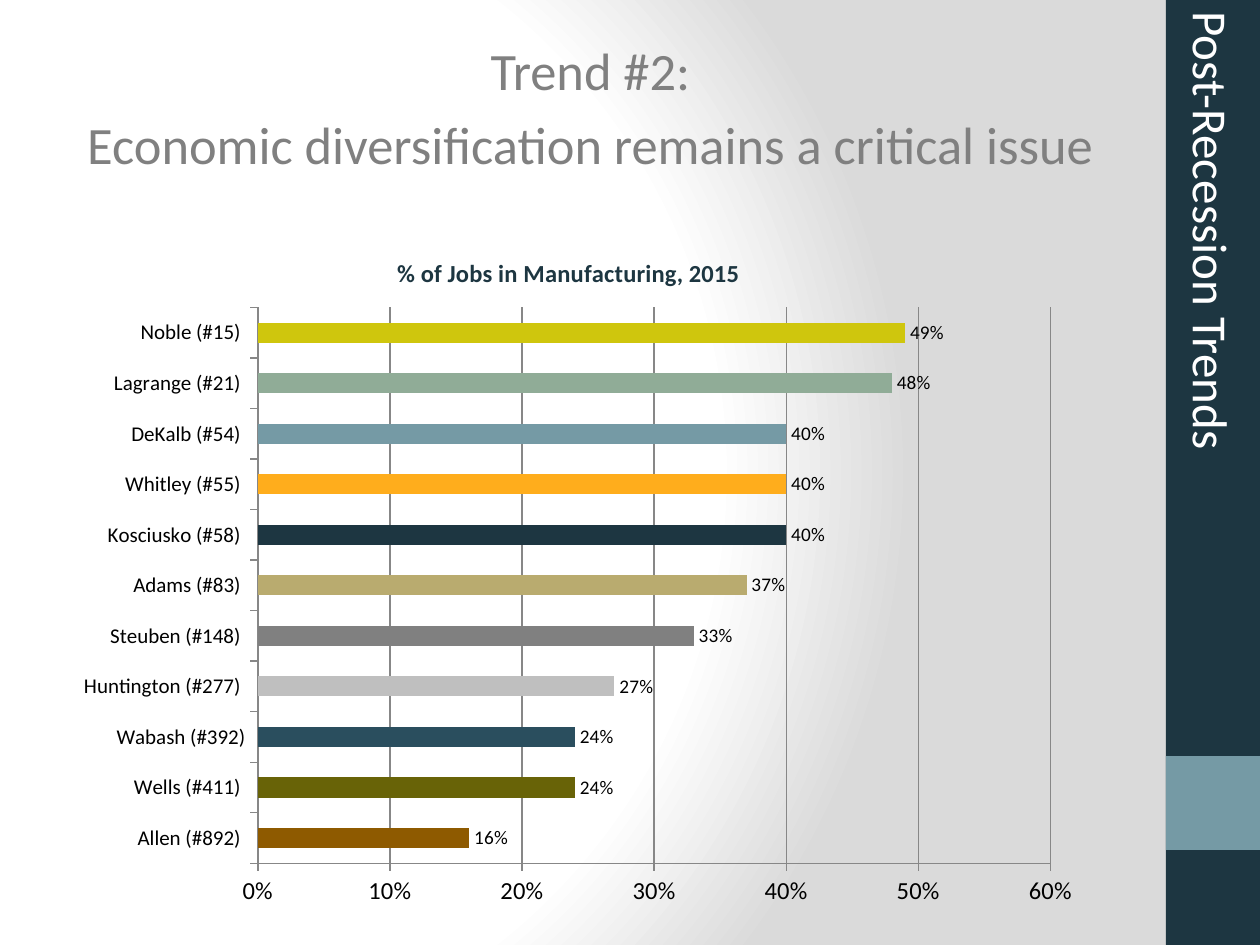
from lxml import etree
from pptx import Presentation
from pptx import util as u
from pptx.chart.data import CategoryChartData
from pptx.dml.color import RGBColor
from pptx.enum import chart as ch, shapes, text
from pptx.oxml import parse_xml
from pptx.oxml.ns import nsdecls, qn

HEX = {"navy": "1D3641", "teal": "759AA5", "gray": "808080", "white": "FFFFFF",
       "black": "000000", "line": "878787"}
JOBS = [  # county (rank), share of jobs, bar colour
    ("Allen (#892) ", 0.16, "8E5A00"),
    ("Wells (#411) ", 0.24, "686307"),
    ("Wabash (#392)", 0.24, "2A4E5E"),
    ("Huntington (#277) ", 0.27, "BFBFBF"),
    ("Steuben (#148) ", 0.33, HEX["gray"]),
    ("Adams (#83) ", 0.37, "B9AB6F"),
    ("Kosciusko (#58) ", 0.40, HEX["navy"]),
    ("Whitley (#55) ", 0.40, "FFAD1C"),
    ("DeKalb (#54) ", 0.40, HEX["teal"]),
    ("Lagrange (#21) ", 0.48, "90AC97"),
    ("Noble (#15) ", 0.49, "CFC60D"),
]


def px(*nums):
    """Turn pixels at 126 to the inch into EMU."""
    return [u.Inches(n / 126) for n in nums]


def style(font, size, hue, bold=False):
    font.name, font.size, font.bold = "Calibri", u.Pt(size), bold
    font.color.rgb = RGBColor.from_string(hue)


prs = Presentation()
prs.slide_width, prs.slide_height = px(1260, 945)
slide = prs.slides.add_slide(prs.slide_layouts[5])

# Background: round gradient
fill = slide.background.fill
fill.gradient()
grad = slide.background._cSld.find(".//" + qn("a:gradFill"))
stops = "".join(f'<a:gs pos="{pos}"><a:srgbClr val="{hue}"/></a:gs>'
                for pos, hue in ((0, "FFFFFF"), (75000, "FFFFFF"), (100000, "DADADA")))
grad.getparent().replace(grad, parse_xml(
    f'<a:gradFill {nsdecls("a")} rotWithShape="1"><a:gsLst>{stops}</a:gsLst>'
    '<a:path path="circle"><a:fillToRect l="20000" t="50000" r="100000" b="50000"/>'
    '</a:path></a:gradFill>'))

# Side band
for top, high, hue in ((0, 945, "navy"), (756, 94, "teal")):
    band = slide.shapes.add_shape(shapes.MSO_SHAPE.RECTANGLE, *px(1166, top, 94, high))
    band.shadow.inherit = False
    band.fill.solid()
    band.fill.fore_color.rgb = RGBColor.from_string(HEX[hue])
    band.line.fill.background()

# Title
title = slide.shapes.title
title.left, title.top, title.width, title.height = px(0, 32, 1166, 154)
frame = title.text_frame
frame.text = "Trend #2:\nEconomic diversification remains a critical issue"
frame.auto_size = text.MSO_AUTO_SIZE.NONE
frame.vertical_anchor = text.MSO_ANCHOR.TOP
for para in frame.paragraphs:
    para.alignment = text.PP_ALIGN.CENTER
    para.space_before = u.Pt(6)
    para._p.get_or_add_pPr().set("marL", str(px(15)[0]))
    style(para.font, 30, HEX["gray"])

# Section name, turned to read downwards
side = slide.shapes.add_textbox(*px(839, 336, 746, 72))
side.rotation = 90
side.text_frame.word_wrap = True
side.text_frame.auto_size = text.MSO_AUTO_SIZE.SHAPE_TO_FIT_TEXT
para = side.text_frame.paragraphs[0]
para.text = "Post-Recession Trends"
style(para.font, 28, HEX["white"])

# Chart
data = CategoryChartData(number_format="0%")
data.categories = [name for name, _, _ in JOBS]
data.add_series("Series 1", [share for _, share, _ in JOBS])
chart = slide.shapes.add_chart(
    ch.XL_CHART_TYPE.BAR_CLUSTERED, *px(33, 231, 1071, 695), data).chart
style(chart.font, 14, HEX["black"])
chart.has_legend = False
chart.has_title = True
head = chart.chart_title.text_frame.paragraphs[0]
head.text = "% of Jobs in Manufacturing, 2015"
style(head.font, 14, HEX["navy"], bold=True)

cats, vals = chart.category_axis, chart.value_axis
vals.minimum_scale, vals.maximum_scale, vals.major_unit = 0, 0.6, 0.1
vals.has_major_gridlines = True
vals.tick_labels.number_format = "0%"
vals.tick_labels.number_format_is_linked = False
for axis, size in ((cats, 12), (vals, 14)):
    axis.major_tick_mark = ch.XL_TICK_MARK.OUTSIDE
    style(axis.tick_labels.font, size, HEX["black"])
for part in (cats.format, vals.format, vals.major_gridlines.format):
    part.line.color.rgb = RGBColor.from_string(HEX["line"])
    part.line.width = u.Pt(0.75)

plot = chart.plots[0]
plot.gap_width = 150
plot.vary_by_categories = False
bars = plot.series[0]
bars.format.fill.solid()
bars.format.fill.fore_color.rgb = RGBColor.from_string(HEX["teal"])
for i, (_, _, hue) in enumerate(JOBS):
    fill = bars.points[i].format.fill
    fill.solid()
    fill.fore_color.rgb = RGBColor.from_string(hue)
tags = bars.data_labels
tags.show_value = True
tags.number_format, tags.number_format_is_linked = "0%", False
tags.position = ch.XL_LABEL_POSITION.OUTSIDE_END
style(tags.font, 11, HEX["black"])

# Fixed place of the plot inside the chart
area = chart._chartSpace.find(".//" + qn("c:plotArea"))
for old in area.findall(qn("c:layout")):
    area.remove(old)
layout = etree.Element(qn("c:layout"))
spot = etree.SubElement(layout, qn("c:manualLayout"))
for tag, val in (("layoutTarget", "inner"), ("xMode", "edge"), ("yMode", "edge"),
                 ("x", 0.21), ("y", 0.11), ("w", 0.74), ("h", 0.8)):
    etree.SubElement(spot, qn("c:" + tag), val=str(val))
area.insert(0, layout)

prs.save("out.pptx")
